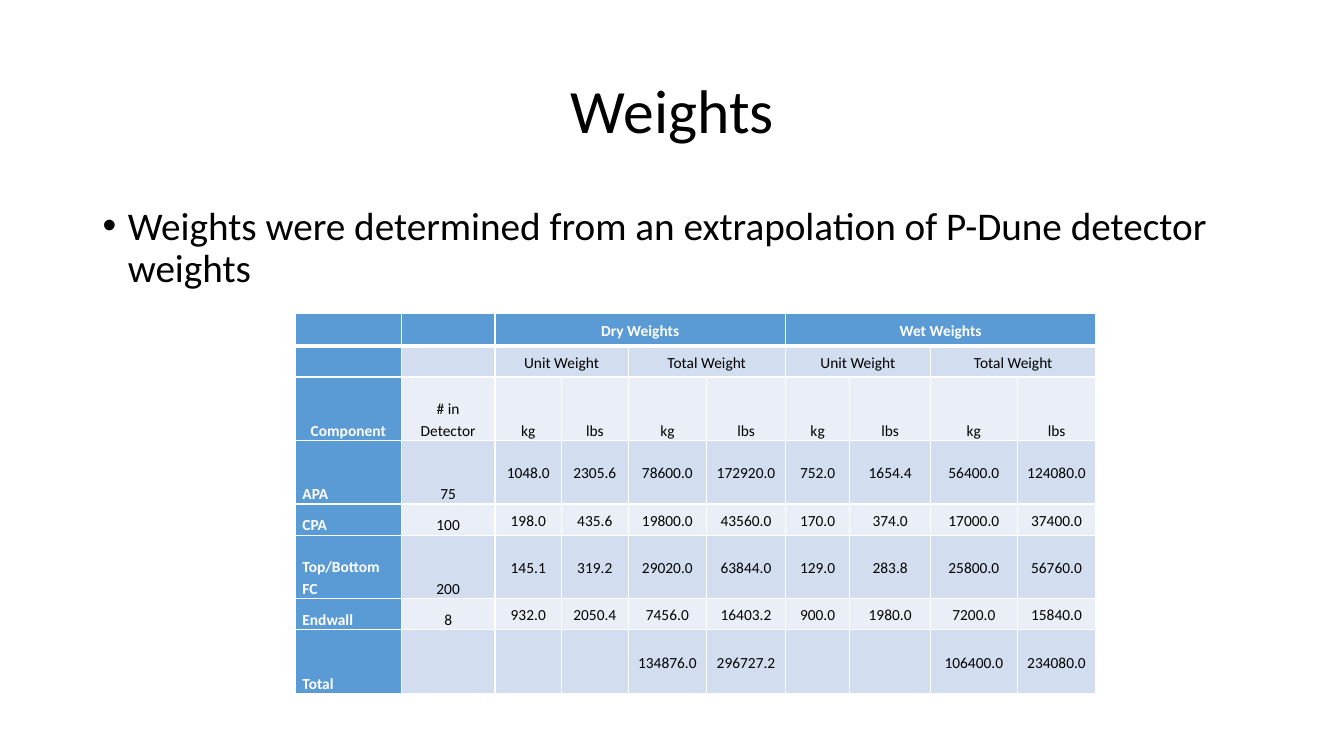
"""Build a slide with a table of dry and wet detector weights."""
from lxml import etree
from pptx import Presentation
from pptx.dml.color import RGBColor
from pptx.enum.text import MSO_ANCHOR, PP_ALIGN
from pptx.oxml.ns import qn
from pptx.util import Inches, Pt

LEFT, CENTER = PP_ALIGN.LEFT, PP_ALIGN.CENTER
TOP, MIDDLE, BOTTOM = MSO_ANCHOR.TOP, MSO_ANCHOR.MIDDLE, MSO_ANCHOR.BOTTOM

TITLE = "Weights"
STATEMENT = "Weights were determined from an extrapolation of P-Dune detector weights"
ROWS = [
    ["", "", "Dry Weights", "", "", "", "Wet Weights", "", "", ""],
    ["", "", "Unit Weight", "", "Total Weight", "", "Unit Weight", "", "Total Weight", ""],
    ["Component", "# in Detector"] + ["kg", "lbs"] * 4,
    ["APA", "75", "1048.0", "2305.6", "78600.0", "172920.0", "752.0", "1654.4", "56400.0", "124080.0"],
    ["CPA", "100", "198.0", "435.6", "19800.0", "43560.0", "170.0", "374.0", "17000.0", "37400.0"],
    ["Top/Bottom FC", "200", "145.1", "319.2", "29020.0", "63844.0", "129.0", "283.8", "25800.0", "56760.0"],
    ["Endwall", "8", "932.0", "2050.4", "7456.0", "16403.2", "900.0", "1980.0", "7200.0", "15840.0"],
    ["Total", "", "", "", "134876.0", "296727.2", "", "", "106400.0", "234080.0"],
]
COLUMN_WIDTHS = [1.05, 0.93, 0.66, 0.66, 0.78, 0.78, 0.64, 0.8, 0.86, 0.78]
ROW_HEIGHTS = [0.32, 0.31, 0.63, 0.63, 0.31, 0.63, 0.31, 0.63]
MERGES = [(0, 2, 4), (0, 6, 4)] + [(1, column, 2) for column in (2, 4, 6, 8)]
HEADER_FILL, BAND_FILLS = "5B9BD5", ("EAEFF7", "D2DEEF")
WHITE, BLACK = "FFFFFF", "000000"


def color(value):
    return RGBColor.from_string(value)


def assign(target, values):
    for name, value in values.items():
        setattr(target, name, value)


def write(frame, text, size, ink, bold=False, **layout):
    para = frame.paragraphs[0]
    assign(para, layout)
    span = para.add_run()
    span.text = text
    assign(span.font, {"name": "Calibri", "size": Pt(size), "bold": bold})
    span.font.color.rgb = color(ink)
    return para


def add_text(page, bounds, anchor, text, size, **layout):
    box = page.shapes.add_textbox(*map(Inches, bounds))
    assign(box.text_frame, {"word_wrap": True, "vertical_anchor": anchor})
    return write(box.text_frame, text, size, BLACK, line_spacing=0.9, **layout)


def add_bullet(para, indent):
    properties = para._p.get_or_add_pPr()
    properties.set("marL", str(Inches(indent)))
    properties.set("indent", str(-Inches(indent)))
    etree.SubElement(properties, qn("a:buFont"), typeface="Arial")
    etree.SubElement(properties, qn("a:buChar"), char="•")


def set_borders(cell, widths):
    properties = cell._tc.get_or_add_tcPr()
    for side, width in widths.items():
        line = etree.SubElement(properties, qn("a:ln" + side), w=str(Pt(width)))
        fill = etree.SubElement(line, qn("a:solidFill"))
        etree.SubElement(fill, qn("a:srgbClr"), val=WHITE)


def style_cell(cell, row, column, text):
    header = row == 0 or column == 0
    set_borders(cell, {"L": 1, "R": 1, "T": 3 if row == 1 else 1, "B": 3 if row == 0 else 1})
    cell.fill.solid()
    cell.fill.fore_color.rgb = color(HEADER_FILL if header else BAND_FILLS[row % 2])
    low = row == 2 or (row > 2 and column < 2)
    assign(cell, {"margin_left": Inches(0.07), "margin_right": Inches(0.07),
                  "margin_top": 0, "margin_bottom": 0,
                  "vertical_anchor": BOTTOM if low else MIDDLE})
    if text:
        write(cell.text_frame, text, 11, WHITE if header else BLACK, header,
              alignment=LEFT if row > 2 and column == 0 else CENTER, line_spacing=1.15)


def add_weights(page, left, top):
    bounds = (left, top, sum(COLUMN_WIDTHS), sum(ROW_HEIGHTS))
    table = page.shapes.add_table(len(ROWS), len(COLUMN_WIDTHS), *map(Inches, bounds)).table
    for column, width in zip(table.columns, COLUMN_WIDTHS):
        column.width = Inches(width)
    for row, height in zip(table.rows, ROW_HEIGHTS):
        row.height = Inches(height)
    for row, column, count in MERGES:
        table.cell(row, column).merge(table.cell(row, column + count - 1))
    for row, texts in enumerate(ROWS):
        for column, text in enumerate(texts):
            style_cell(table.cell(row, column), row, column, text)


def main():
    deck = Presentation()
    assign(deck, {"slide_width": Inches(13.33), "slide_height": Inches(7.5)})
    page = deck.slides.add_slide(deck.slide_layouts[6])
    add_text(page, (0.92, 0.4, 11.5, 1.45), MIDDLE, TITLE, 44, alignment=CENTER)
    statement = add_text(page, (0.92, 2, 11.5, 4.76), TOP, STATEMENT, 28,
                         alignment=LEFT, space_before=Pt(10))
    add_bullet(statement, 0.25)
    add_weights(page, 2.93, 3.11)
    deck.save("out.pptx")


if __name__ == "__main__":
    main()
